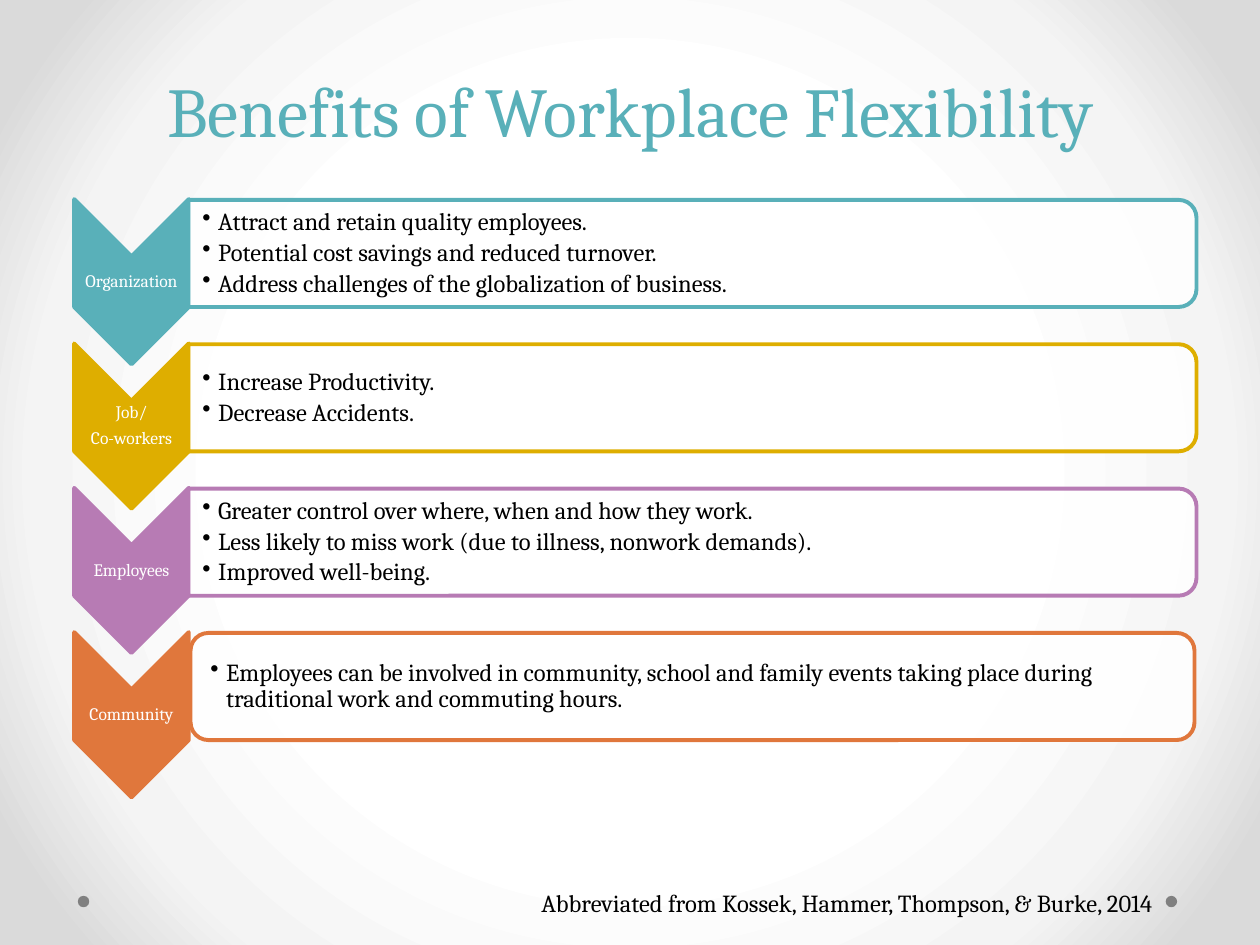
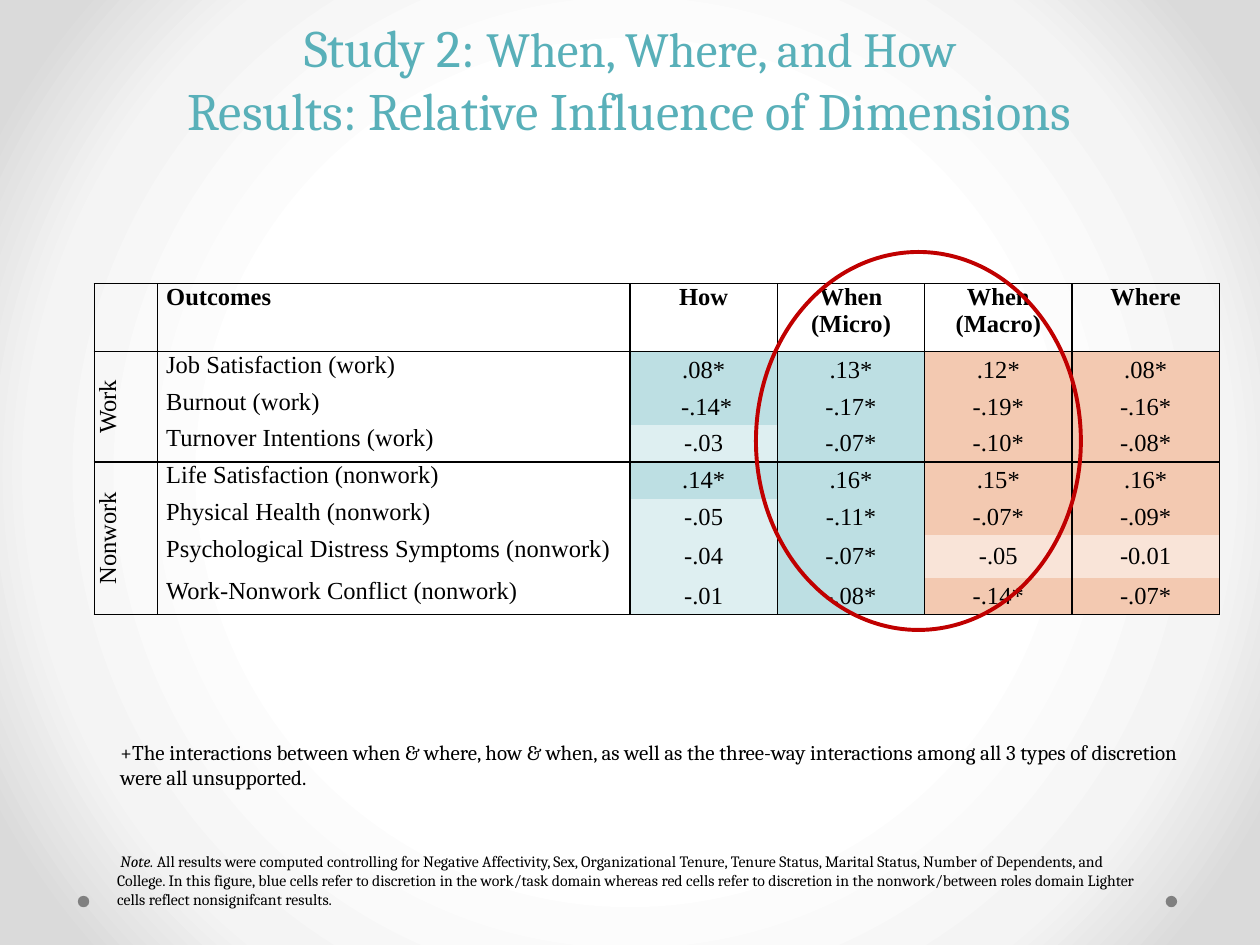
from lxml import etree
from pptx import Presentation
from pptx.dml.color import RGBColor
from pptx.enum.shapes import MSO_SHAPE
from pptx.enum.text import MSO_ANCHOR, MSO_AUTO_SIZE, PP_ALIGN
from pptx.oxml.ns import qn
from pptx.util import Cm, Pt

CENTER, LEFT, RIGHT = PP_ALIGN.CENTER, PP_ALIGN.LEFT, PP_ALIGN.RIGHT
TOP, MIDDLE, BOTTOM = MSO_ANCHOR.TOP, MSO_ANCHOR.MIDDLE, MSO_ANCHOR.BOTTOM
ELLIPSE, CHEVRON = MSO_SHAPE.OVAL, MSO_SHAPE.CHEVRON
OPEN_BAR, ROUND_BAR = MSO_SHAPE.ROUND_2_SAME_RECTANGLE, MSO_SHAPE.ROUNDED_RECTANGLE

FONT, TABLE_FONT = "Cambria", "Times New Roman"
COLORS = {
    "teal": "59B0B9", "gold": "DEAE00", "purple": "B77BB4", "orange": "E0773C",
    "black": "000000", "white": "FFFFFF", "dot": "808080", "ring": "C00000",
    "work": "BDDFE3", "work_light": "DEEFF1",
    "nonwork": "F3C9B1", "nonwork_light": "F9E4D8",
}
BACKGROUND_STOPS = [(50, "FFFFFF"), (76, "F4F4F4"), (92, "DADADA")]

BENEFITS_TITLE = [[("Benefits of Workplace Flexibility", 40)]]
BENEFITS = [
    (["Organization"], "teal", [
        "Attract and retain quality employees.",
        "Potential cost savings and reduced turnover.",
        "Address challenges of the globalization of business.",
    ]),
    (["Job/", "Co-workers"], "gold", ["Increase Productivity.", "Decrease Accidents."]),
    (["Employees"], "purple", [
        "Greater control over where, when and how they work.",
        "Less likely to miss work (due to illness, nonwork demands).",
        "Improved well-being.",
    ]),
    (["Community"], "orange", [
        "Employees can be involved in community, school and family events taking place "
        "during traditional work and commuting hours.",
    ]),
]
CITATION = "Abbreviated from Kossek, Hammer, Thompson, & Burke, 2014"

RESULTS_TITLE = [
    [("Study 2: ", 30), ("When, Where, and How", 28)],
    [("Results: Relative Influence of Dimensions", 30)],
]
HEADER = ["", "Outcomes", "How", "When (Micro)", "When (Macro)", "Where"]
COLUMN_DOMAINS = [None, None, "work", "work", "nonwork", "nonwork"]
OUTCOME_GROUPS = [
    ("Work", [
        ("Job Satisfaction (work)", ".08*", ".13*", ".12*", ".08*"),
        ("Burnout (work)", " -.14*", "-.17*", "-.19*", "-.16*"),
        ("Turnover Intentions (work)", "-.03", "-.07*", "-.10*", "-.08*"),
    ]),
    ("Nonwork", [
        ("Life Satisfaction (nonwork)", ".14*", ".16*", ".15*", ".16*"),
        ("Physical Health (nonwork)", "-.05", "-.11*", "-.07*", "-.09*"),
        ("Psychological Distress Symptoms (nonwork)", "-.04", "-.07*", "-.05", "-0.01"),
        ("Work-Nonwork Conflict (nonwork)", "-.01", "-.08*", "-.14*", "-.07*"),
    ]),
]
COLUMN_WIDTHS = [1.27, 9.53] + [2.97] * 4
ROW_HEIGHTS = [1.37] + [0.74] * 5 + [0.86, 0.74]
INTERACTIONS = (
    "+The interactions between when & where, how & when, as well as the three-way "
    "interactions among all 3 types of discretion were all unsupported."
)
NOTE_LEAD = " Note."
NOTE = (
    " All results were computed controlling for Negative Affectivity, Sex, Organizational "
    "Tenure, Tenure Status, Marital Status, Number of Dependents, and College. In this "
    "figure, blue cells refer to discretion in the work/task domain whereas red cells refer "
    "to discretion in the nonwork/between roles domain Lighter cells reflect nonsignifcant "
    "results."
)

BAR_PITCH, FIRST_BAR_Y, BAR_BREADTH = 2.91, 5.11, 2.16
BAR_LEFT, BAR_RIGHT = 3.8, 24.12
CHEVRON_X, CHEVRON_DROP, CHEVRON_LENGTH, CHEVRON_BREADTH = 2.65, 0.57, 3.33, 2.31
LABEL_HEIGHT, LIST_HEIGHT = 0.99, 1.96


def rgb(name):
    return RGBColor.from_string(COLORS[name])


def add_child(parent, tag, **attributes):
    return etree.SubElement(parent, qn(tag), attributes)


def style_run(run, size, color="black", font=FONT, bold=False, italic=False):
    run.font.name = font
    run.font.size = Pt(size)
    run.font.bold = bold
    run.font.italic = italic
    run.font.color.rgb = rgb(color)


def set_background(master):
    master.background.fill.solid()
    properties = master.element.find(".//" + qn("p:bgPr"))
    properties.remove(properties[0])
    gradient = etree.Element(qn("a:gradFill"), rotWithShape="1")
    properties.insert(0, gradient)
    stops = add_child(gradient, "a:gsLst")
    for position, color in BACKGROUND_STOPS:
        stop = add_child(stops, "a:gs", pos=str(position * 1000))
        add_child(stop, "a:srgbClr", val=color)
    focus = add_child(gradient, "a:path", path="circle")
    add_child(focus, "a:fillToRect", l="50000", t="50000", r="50000", b="50000")


def add_shape(slide, kind, left, top, width, height, fill=None, line=None):
    shape = slide.shapes.add_shape(kind, Cm(left), Cm(top), Cm(width), Cm(height))
    shape.shadow.inherit = False
    if fill:
        shape.fill.solid()
        shape.fill.fore_color.rgb = rgb(fill)
    else:
        shape.fill.background()
    if line:
        shape.line.color.rgb = rgb(line)
        shape.line.width = Pt(2.25)
    else:
        shape.line.fill.background()
    return shape


def add_turned_shape(slide, kind, center_x, center_y, length, breadth, fill, line):
    shape = add_shape(slide, kind, center_x - length / 2, center_y - breadth / 2,
                      length, breadth, fill, line)
    shape.rotation = 90
    return shape


def add_text(slide, left, top, width, height, lines, size, color="black",
             alignment=LEFT, anchor=TOP, insets=None):
    box = slide.shapes.add_textbox(Cm(left), Cm(top), Cm(width), Cm(height))
    text_frame = box.text_frame
    text_frame.word_wrap = True
    text_frame.vertical_anchor = anchor
    if insets:
        text_frame.margin_left = Cm(insets[0])
        text_frame.margin_right = text_frame.margin_top = text_frame.margin_bottom = Cm(insets[1])
    text_frame.text = "\n".join(lines)
    for paragraph in text_frame.paragraphs:
        paragraph.alignment = alignment
        style_run(paragraph.runs[0], size, color)
    return text_frame


def space_paragraphs(text_frame, after):
    for paragraph in text_frame.paragraphs:
        paragraph.line_spacing = 0.9
        paragraph.space_after = Pt(after)


def add_bullets(text_frame):
    for paragraph in text_frame.paragraphs:
        paragraph.level = 1
        properties = paragraph._p.get_or_add_pPr()
        properties.set("marL", str(Cm(0.32)))
        properties.set("indent", str(-Cm(0.32)))
        add_child(properties, "a:buChar", char="•")


def add_slide(presentation, title_lines, top, height):
    slide = presentation.slides.add_slide(presentation.slide_layouts[5])
    for left in (23.5, 1.57):
        add_shape(slide, ELLIPSE, left, 18.06, 0.23, 0.23, "dot")
    title = slide.shapes.title
    title.left, title.top, title.width, title.height = Cm(1.27), Cm(top), Cm(22.86), Cm(height)
    text_frame = title.text_frame
    text_frame.auto_size = MSO_AUTO_SIZE.NONE
    text_frame.vertical_anchor = BOTTOM
    paragraph = text_frame.paragraphs[0]
    paragraph.alignment = CENTER
    for index, line in enumerate(title_lines):
        if index:
            paragraph.add_line_break()
        for text, size in line:
            run = paragraph.add_run()
            run.text = text
            style_run(run, size, "teal")
    return slide


def add_benefit(slide, index, labels, color, benefits):
    is_last = index == len(BENEFITS) - 1
    center_y = FIRST_BAR_Y + index * BAR_PITCH
    chevron_y = center_y + CHEVRON_DROP
    add_turned_shape(slide, CHEVRON, CHEVRON_X, chevron_y,
                     CHEVRON_LENGTH, CHEVRON_BREADTH, color, color)
    label = add_text(slide, CHEVRON_X - CHEVRON_BREADTH / 2, chevron_y - LABEL_HEIGHT / 2,
                     CHEVRON_BREADTH, LABEL_HEIGHT, labels, 10, "white",
                     CENTER, MIDDLE, (0.02, 0.02))
    space_paragraphs(label, 4)

    length = BAR_RIGHT - BAR_LEFT - (0.08 if is_last else 0)
    bar = add_turned_shape(slide, ROUND_BAR if is_last else OPEN_BAR,
                           (BAR_LEFT + BAR_RIGHT) / 2, center_y,
                           BAR_BREADTH, length, "white", color)
    fill_color = bar._element.spPr.find(qn("a:solidFill"))[0]
    add_child(fill_color, "a:alpha", val="90000")
    inset = 0.16 if is_last else 0
    bullets = add_text(slide, BAR_LEFT + inset, center_y - LIST_HEIGHT / 2, 20.22 - inset,
                       LIST_HEIGHT, benefits, 14, anchor=MIDDLE, insets=(0.28, 0.02))
    space_paragraphs(bullets, 2.5)
    add_bullets(bullets)


def set_borders(cell, top, bottom):
    properties = cell._tc.get_or_add_tcPr()
    for side, width in (("L", 1), ("R", 1), ("T", top), ("B", bottom)):
        line = add_child(properties, "a:ln" + side, w=str(Pt(width)))
        if width:
            add_child(add_child(line, "a:solidFill"), "a:srgbClr", val=COLORS["black"])
        else:
            add_child(line, "a:noFill")


def format_cell(cell, text, row, column):
    cell.margin_left = cell.margin_right = Cm(0.18)
    cell.margin_top = cell.margin_bottom = 0
    cell.vertical_anchor = MIDDLE if row and column != 1 else TOP
    domain = COLUMN_DOMAINS[column]
    if row and domain:
        cell.fill.solid()
        cell.fill.fore_color.rgb = rgb(domain if text.endswith("*") else domain + "_light")
    else:
        cell.fill.background()
    cell.text_frame.text = text
    paragraph = cell.text_frame.paragraphs[0]
    paragraph.alignment = LEFT if column == 1 else CENTER
    for run in paragraph.runs:
        style_run(run, 14, font=TABLE_FONT, bold=row == 0)


def add_results_table(slide):
    rows, rules, merges = [HEADER], {0: 1, 1: 1}, []
    for group, outcomes in OUTCOME_GROUPS:
        start = len(rows)
        rows += [[group if index == 0 else "", *outcome]
                 for index, outcome in enumerate(outcomes)]
        rules[len(rows)] = 1.5
        merges.append((start, len(rows) - 1))
    rules[len(rows)] = 1

    frame = slide.shapes.add_table(len(rows), len(HEADER), Cm(1.9), Cm(5.72),
                                   Cm(sum(COLUMN_WIDTHS)), Cm(sum(ROW_HEIGHTS)))
    table = frame.table
    table.first_row = table.horz_banding = False
    for column, width in zip(table.columns, COLUMN_WIDTHS):
        column.width = Cm(width)
    for row, height in zip(table.rows, ROW_HEIGHTS):
        row.height = Cm(height)
    ends = dict(merges)
    for row, values in enumerate(rows):
        for column, text in enumerate(values):
            cell = table.cell(row, column)
            last = ends.get(row, row) if column == 0 else row
            set_borders(cell, rules.get(row, 0), rules.get(last + 1, 0))
            format_cell(cell, text, row, column)
    for first, last in merges:
        table.cell(first, 0).merge(table.cell(last, 0))
        table.cell(first, 0)._tc.get_or_add_tcPr().set("vert", "vert270")


def build_benefits(presentation):
    slide = add_slide(presentation, BENEFITS_TITLE, -0.2, 3.38)
    slide.shapes.title.text_frame.paragraphs[0].line_spacing = Pt(58)
    for index, benefit in enumerate(BENEFITS):
        add_benefit(slide, index, *benefit)
    add_text(slide, 7.82, 17.78, 15.67, 0.86, [CITATION], 14, alignment=RIGHT)


def build_results(presentation):
    slide = add_slide(presentation, RESULTS_TITLE, 0, 2.97)
    note = add_text(slide, 2.11, 17.04, 21.34, 2, [NOTE_LEAD], 9)
    paragraph = note.paragraphs[0]
    paragraph.runs[0].font.italic = True
    run = paragraph.add_run()
    run.text = NOTE
    style_run(run, 9)
    add_results_table(slide)
    add_shape(slide, ELLIPSE, 15.24, 5.08, 6.55, 7.62, line="ring")
    add_text(slide, 2.18, 14.78, 22.43, 1.27, [INTERACTIONS], 12)


def main():
    presentation = Presentation()
    presentation.slide_width, presentation.slide_height = Cm(25.4), Cm(19.05)
    set_background(presentation.slide_master)
    build_benefits(presentation)
    build_results(presentation)
    presentation.save("out.pptx")


if __name__ == "__main__":
    main()
